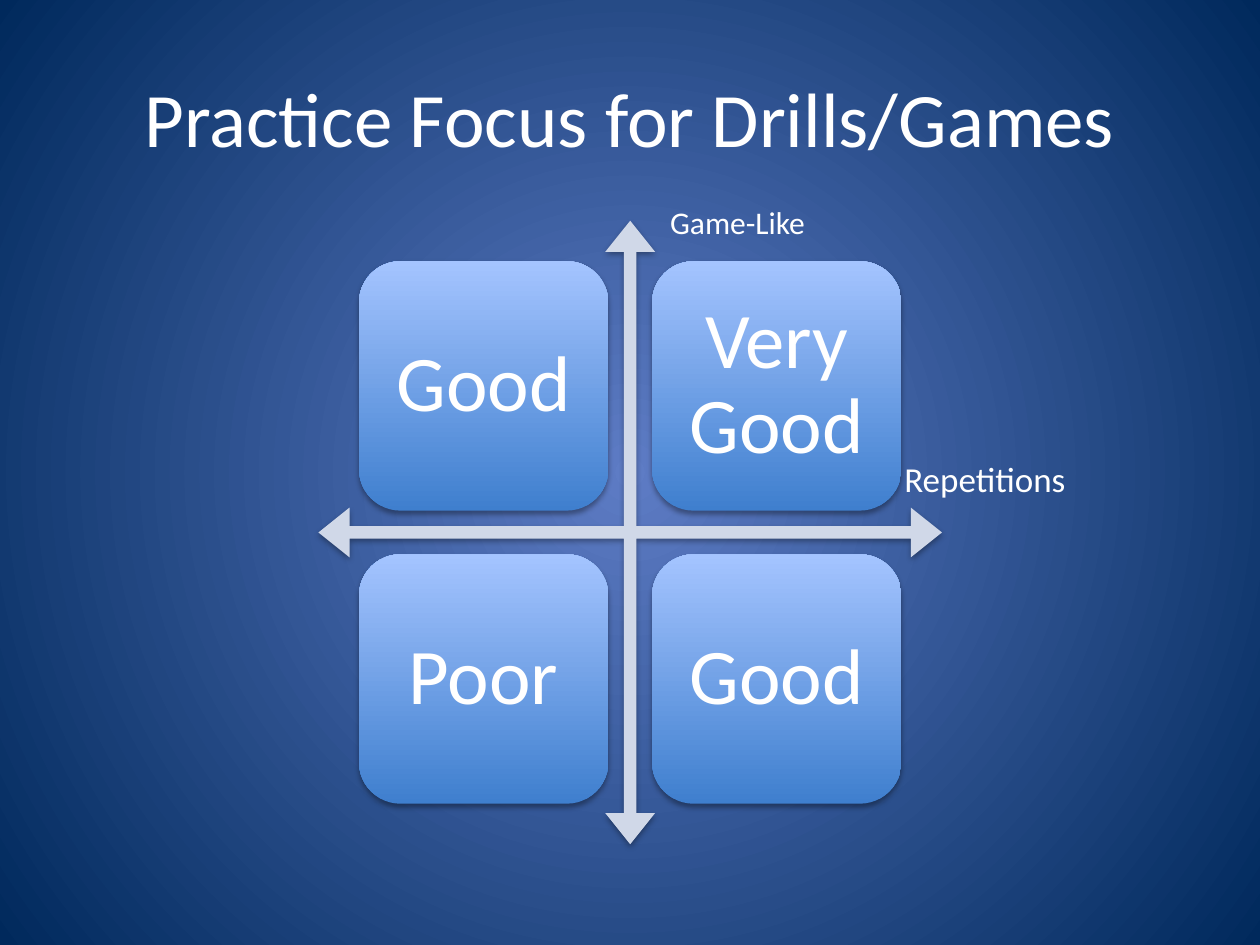
from lxml.etree import SubElement
from pptx import Presentation
from pptx.dml.color import RGBColor
from pptx.enum.shapes import MSO_SHAPE
from pptx.enum.text import MSO_ANCHOR, PP_ALIGN
from pptx.oxml.ns import qn
from pptx.util import Cm, Pt

COLORS = {
    "text": "FFFFFF", "arrow": "D0D8E8", "shadow": "000000",
    "glow": "5E7CC5", "edge": "00295C",
    "low": "3F7FCE", "high": "A4C4FF",
}
FONT = "Calibri"
RATINGS = [["Good", "Very Good"], ["Poor", "Good"]]


def color(name):
    return RGBColor.from_string(COLORS[name])


def blend(fill, first, last):
    """Give a fill a two-colour gradient running upwards."""
    fill.gradient()
    fill.gradient_angle = 90
    for stop, name, place in zip(fill.gradient_stops, (first, last), (0, 1)):
        stop.color.rgb = color(name)
        stop.position = place


def shade(shape):
    """Replace the theme's shadow with a soft one below the shape."""
    shape.shadow.inherit = False
    effects = shape.element.spPr.find(qn("a:effectLst"))
    outer = SubElement(effects, qn("a:outerShdw"), blurRad=str(Pt(3.1)),
                       dist=str(Pt(1.8)), dir="5400000", rotWithShape="0")
    tint = SubElement(outer, qn("a:srgbClr"), val=COLORS["shadow"])
    SubElement(tint, qn("a:alpha"), val="35000")


def write(shape, text, size, align=PP_ALIGN.LEFT, anchor=MSO_ANCHOR.TOP,
          inset=None, spacing=None):
    frame = shape.text_frame
    frame.word_wrap = True
    frame.vertical_anchor = anchor
    if inset is not None:
        frame.margin_left = frame.margin_right = inset
        frame.margin_top = frame.margin_bottom = inset
    para = frame.paragraphs[0]
    para.alignment = align
    para.line_spacing = spacing
    run = para.add_run()
    run.text = text
    run.font.size = Pt(size)
    run.font.name = FONT
    run.font.color.rgb = color("text")


def label(slide, text, box, size, **style):
    write(slide.shapes.add_textbox(*box), text, size, **style)


def backdrop(slide):
    blend(slide.background.fill, "glow", "edge")
    grad = slide.element.find(".//" + qn("a:gradFill"))
    grad.remove(grad.find(qn("a:lin")))
    path = SubElement(grad, qn("a:path"), path="circle")
    SubElement(path, qn("a:fillToRect"),
               l="50000", t="50000", r="50000", b="50000")


def tile(shapes, text, box):
    shape = shapes.add_shape(MSO_SHAPE.ROUNDED_RECTANGLE, *box)
    blend(shape.fill, "low", "high")
    shape.line.fill.background()
    shade(shape)
    write(shape, text, 45, align=PP_ALIGN.CENTER, anchor=MSO_ANCHOR.MIDDLE,
          inset=Cm(0.48), spacing=0.9)


def cross(shapes, box):
    shape = shapes.add_shape(MSO_SHAPE.QUAD_ARROW, *box)
    for index, value in enumerate((0.02, 0.04, 0.05)):
        shape.adjustments[index] = value
    shape.fill.solid()
    shape.fill.fore_color.rgb = color("arrow")
    shape.line.fill.background()
    shade(shape)


def matrix(slide, left, top, side):
    """Draw the crossed axes and the four rated tiles in a square."""
    shapes = slide.shapes.add_group_shape().shapes
    cross(shapes, (left, top, side, side))
    size, edge, step = (int(side * part) for part in (0.4, 0.065, 0.47))
    for row, names in enumerate(RATINGS):
        for col, name in enumerate(names):
            tile(shapes, name, (left + edge + col * step,
                                top + edge + row * step, size, size))


def main():
    deck = Presentation()
    deck.slide_width, deck.slide_height = Cm(25.4), Cm(19.05)
    slide = deck.slides.add_slide(deck.slide_layouts[6])
    backdrop(slide)
    label(slide, "Practice Focus for Drills/Games",
          (Cm(1.27), Cm(0.76), Cm(22.86), Cm(3.18)), 44,
          align=PP_ALIGN.CENTER, anchor=MSO_ANCHOR.MIDDLE)
    matrix(slide, Cm(6.42), Cm(4.45), Cm(12.57))
    label(slide, "Game-Like", (Cm(13.26), Cm(3.96), Cm(3.81), Cm(1.02)), 18)
    label(slide, "Repetitions", (Cm(17.98), Cm(9.09), Cm(4.65), Cm(1.12)), 20)
    deck.save("out.pptx")


if __name__ == "__main__":
    main()
